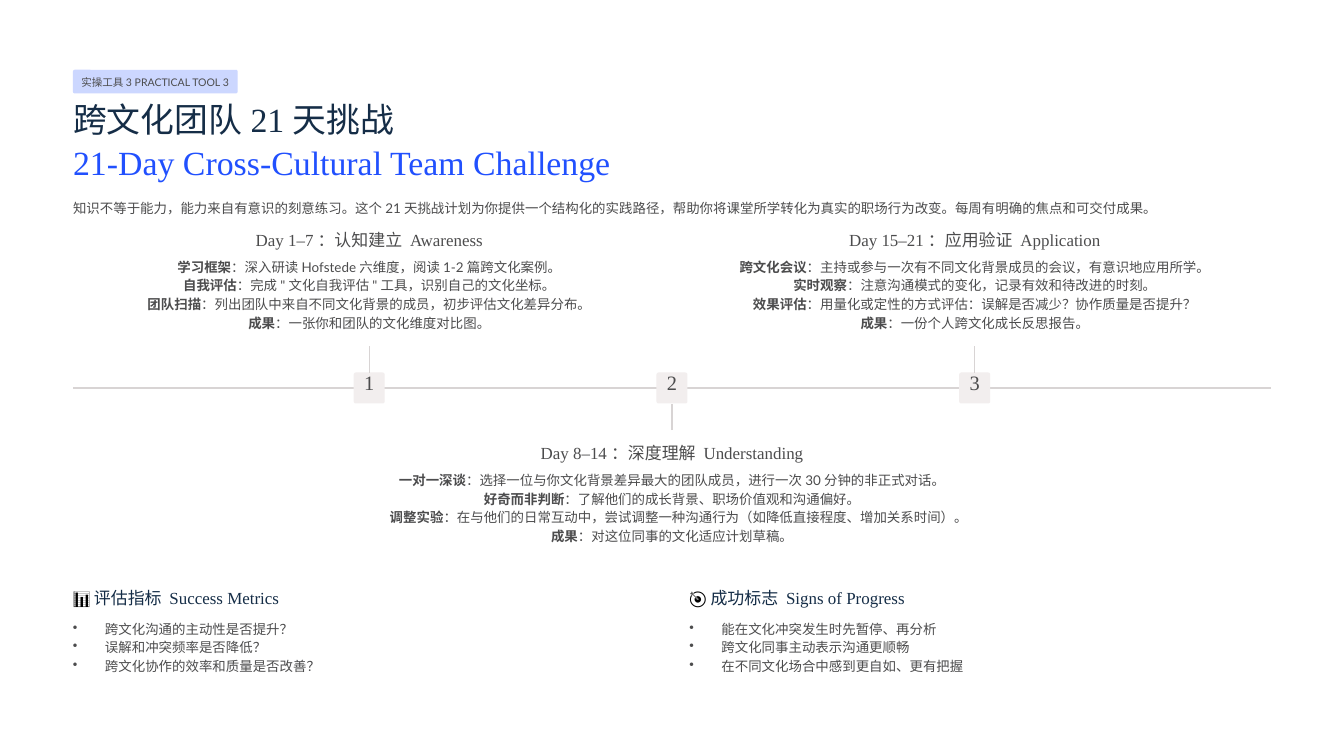
from lxml import etree
from pptx import Presentation
from pptx.dml.color import RGBColor
from pptx.enum.shapes import MSO_CONNECTOR, MSO_SHAPE
from pptx.enum.text import MSO_ANCHOR, MSO_AUTO_SIZE, PP_ALIGN
from pptx.oxml.ns import qn
from pptx.util import Pt

LEFT, CENTER = PP_ALIGN.LEFT, PP_ALIGN.CENTER
ROUNDED = MSO_SHAPE.ROUNDED_RECTANGLE
STRAIGHT = MSO_CONNECTOR.STRAIGHT
TOP_SIDE, BOTTOM_SIDE = 0, 2

SERIF, SANS = "Times New Roman", "Lato"
COLORS = {
    "tag": "CCD7FF", "text": "4C4C4D", "navy": "152D47", "blue": "2150FE",
    "line": "D8D4D4", "badge": "F2EEEE", "icon": "000000",
}

MARGIN, CONTENT_WIDTH = 62.6, 1026.8
AXIS_Y, BADGE_SIZE, STEM_LENGTH = 332.6, 26.6, 36
STAGE_CENTER, STAGE_STEP, STAGE_WIDTH = 576, 259.5, 484.6

# Heading, heading width, body height, (label, text) lines
STAGES = [
    ("Day 1–7：认知建立 Awareness", 186.5, 65.5, [
        ("学习框架", "：深入研读Hofstede六维度，阅读1-2篇跨文化案例。"),
        ("自我评估", "：完成\"文化自我评估\"工具，识别自己的文化坐标。"),
        ("团队扫描", "：列出团队中来自不同文化背景的成员，初步评估文化差异分布。"),
        ("成果", "：一张你和团队的文化维度对比图。")]),
    ("Day 8–14：深度理解 Understanding", 222.5, 82, [
        ("一对一深谈", "：选择一位与你文化背景差异最大的团队成员，进行一次30分钟的非正式对话。"),
        ("好奇而非判断", "：了解他们的成长背景、职场价值观和沟通偏好。"),
        ("调整实验", "：在与他们的日常互动中，尝试调整一种沟通行为（如降低直接程度、增加关系时间）。"),
        ("成果", "：对这位同事的文化适应计划草稿。")]),
    ("Day 15–21：应用验证 Application", 205.2, 65.5, [
        ("跨文化会议", "：主持或参与一次有不同文化背景成员的会议，有意识地应用所学。"),
        ("实时观察", "：注意沟通模式的变化，记录有效和待改进的时刻。"),
        ("效果评估", "：用量化或定性的方式评估：误解是否减少？协作质量是否提升？"),
        ("成果", "：一份个人跨文化成长反思报告。")]),
]

# Left edge, heading width, icon, heading, bullets
CHECKLISTS = [
    (MARGIN, 178, "📊", " 评估指标 Success Metrics", [
        "跨文化沟通的主动性是否提升？",
        "误解和冲突频率是否降低？",
        "跨文化协作的效率和质量是否改善？"]),
    (591, 184.5, "🎯", " 成功标志 Signs of Progress", [
        "能在文化冲突发生时先暂停、再分析",
        "跨文化同事主动表示沟通更顺畅",
        "在不同文化场合中感到更自如、更有把握"]),
]


def color(name):
    return RGBColor.from_string(COLORS[name])


def prepare_frame(frame, wrap=True):
    frame.margin_left = frame.margin_right = 0
    frame.margin_top = frame.margin_bottom = 0
    frame.word_wrap = wrap
    frame.auto_size = MSO_AUTO_SIZE.NONE
    frame.vertical_anchor = MSO_ANCHOR.TOP


def add_bullet(paragraph):
    properties = paragraph._p.get_or_add_pPr()
    properties.set("marL", str(Pt(27.4)))
    properties.set("indent", str(-Pt(27.4)))
    etree.SubElement(properties, qn("a:buChar")).set("char", "•")


def write_lines(frame, lines, size, spacing, font=SANS, fill="text", align=LEFT, bullets=False):
    """Write one paragraph per line; a line is a list of (text, bold, color) runs."""
    for index, runs in enumerate(lines):
        paragraph = frame.add_paragraph() if index else frame.paragraphs[0]
        paragraph.alignment = align
        paragraph.line_spacing = Pt(spacing)
        if bullets:
            add_bullet(paragraph)
        paragraph.font.size = Pt(size)
        paragraph.font.name = font
        paragraph.font.color.rgb = color(fill)
        for text, bold, run_color in runs:
            run = paragraph.add_run()
            run.text = text
            if bold:
                run.font.bold = True
            if run_color:
                run.font.color.rgb = color(run_color)


def plain(text):
    return [(text, False, None)]


def add_text(slide, left, top, width, height, lines, size, spacing, wrap=True, **style):
    box = slide.shapes.add_textbox(Pt(left), Pt(top), Pt(width), Pt(height))
    prepare_frame(box.text_frame, wrap)
    write_lines(box.text_frame, lines, size, spacing, **style)


def add_panel(slide, left, top, width, height, fill):
    panel = slide.shapes.add_shape(ROUNDED, Pt(left), Pt(top), Pt(width), Pt(height))
    panel.adjustments[0] = 0.07
    panel.shadow.inherit = False
    panel.fill.solid()
    panel.fill.fore_color.rgb = color(fill)
    panel.line.fill.background()
    return panel


def add_line(slide, x1, y1, x2, y2):
    line = slide.shapes.add_connector(STRAIGHT, Pt(x1), Pt(y1), Pt(x2), Pt(y2))
    line.line.color.rgb = color("line")
    line.line.width = Pt(1.25)
    etree.SubElement(line._element.spPr, qn("a:effectLst"))
    return line


def add_title(slide):
    title = slide.shapes.title
    title.left, title.top, title.width, title.height = Pt(MARGIN), Pt(82.8), Pt(468.7), Pt(73.4)
    prepare_frame(title.text_frame)
    write_lines(title.text_frame,
                [[("跨文化团队21天挑战", False, "navy")],
                 [("21-Day Cross-Cultural Team Challenge", False, "blue")]],
                29, 36.5, font=SERIF)


def add_stage(slide, index, heading, heading_width, body_height, items):
    center = STAGE_CENTER + (index - 1) * STAGE_STEP
    below = index % 2 == 1
    direction = 1 if below else -1
    heading_top = 378.7 if below else 195.8

    # Numbered badge with its stem
    badge = add_panel(slide, center - BADGE_SIZE / 2, AXIS_Y - BADGE_SIZE / 2,
                      BADGE_SIZE, BADGE_SIZE, "badge")
    stem = add_line(slide, center, AXIS_Y + direction * STEM_LENGTH, center, AXIS_Y)
    stem.end_connect(badge, BOTTOM_SIDE if below else TOP_SIDE)
    add_text(slide, center - 8.7, 321.1, 17.4, 22.3, [plain(str(index + 1))],
             17.5, 17.5, wrap=False, font=SERIF, align=CENTER)

    # Heading and tasks
    add_text(slide, center - heading_width / 2, heading_top, heading_width, 18,
             [plain(heading)], 14.5, 18, wrap=False, font=SERIF, align=CENTER)
    lines = [[(label, True, None), (text, False, None)] for label, text in items]
    add_text(slide, center - STAGE_WIDTH / 2, heading_top + 23.8, STAGE_WIDTH, body_height,
             lines, 11.5, 16, align=CENTER)


def add_checklist(slide, left, heading_width, icon, heading, items):
    add_text(slide, left, 503.3, heading_width, 18,
             [[(icon, False, "icon"), (heading, False, None)]],
             14.5, 18, wrap=False, font=SERIF, fill="navy")
    add_text(slide, left, 529.9, 499, 55.4, [plain(item) for item in items],
             11.5, 16, bullets=True)


def main():
    presentation = Presentation()
    presentation.slide_width, presentation.slide_height = Pt(1152), Pt(648)
    slide = presentation.slides.add_slide(presentation.slide_layouts[5])

    # Tag, title and introduction
    add_panel(slide, MARGIN, 59.8, 141.1, 20.2, "tag")
    add_text(slide, 69.8, 62.6, 127.4, 13, [plain("实操工具3 PRACTICAL TOOL 3")],
             9, 13, wrap=False)
    add_title(slide)
    add_text(slide, MARGIN, 169.2, CONTENT_WIDTH, 16.6,
             [plain("知识不等于能力，能力来自有意识的刻意练习。这个21天挑战计划为你提供一个结构化的实践路径，"
                    "帮助你将课堂所学转化为真实的职场行为改变。每周有明确的焦点和可交付成果。")],
             11.5, 16, wrap=False)

    # Timeline
    add_line(slide, MARGIN, AXIS_Y, MARGIN + CONTENT_WIDTH, AXIS_Y)
    for index, stage in enumerate(STAGES):
        add_stage(slide, index, *stage)

    # Checklists
    for checklist in CHECKLISTS:
        add_checklist(slide, *checklist)

    presentation.save("out.pptx")


if __name__ == "__main__":
    main()
